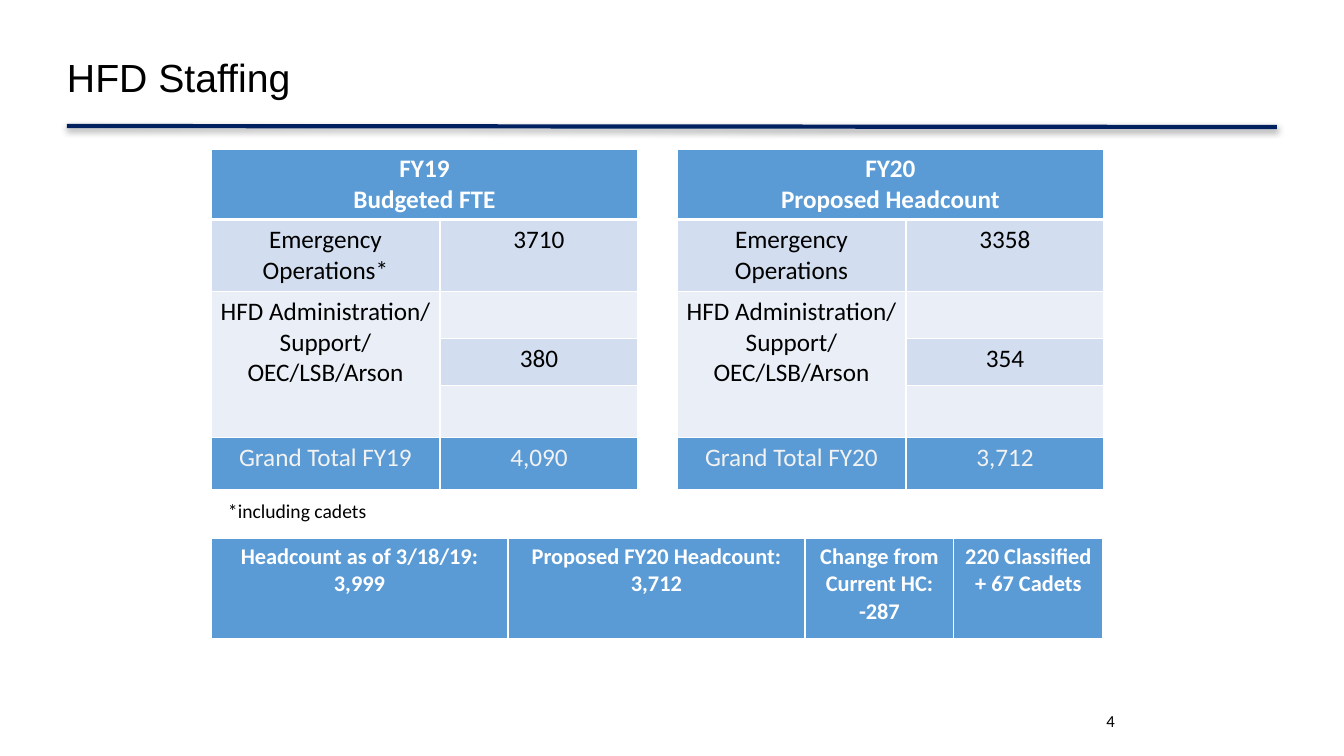
from dataclasses import dataclass

from lxml import etree
from pptx import Presentation
from pptx.dml.color import RGBColor
from pptx.enum.shapes import MSO_CONNECTOR
from pptx.enum.text import MSO_ANCHOR, PP_ALIGN
from pptx.oxml.ns import qn
from pptx.util import Pt

STRAIGHT = MSO_CONNECTOR.STRAIGHT
TOP, MIDDLE = MSO_ANCHOR.TOP, MSO_ANCHOR.MIDDLE
LEFT, CENTER, RIGHT = PP_ALIGN.LEFT, PP_ALIGN.CENTER, PP_ALIGN.RIGHT
SCALE = 914400 / 100.8


@dataclass(frozen=True)
class Theme:
    title_font: str = "Arial"
    body_font: str = "Calibri"
    ink: str = "000000"
    paper: str = "FFFFFF"
    navy: str = "002060"
    blue: str = "5B9BD5"
    band: str = "D2DEEF"
    pale: str = "EAEFF7"
    total_ink: str = "F2F2F2"
    title: int = 28
    table: int = 18
    summary: int = 16
    note: int = 14
    number: int = 12
    thin: int = 1
    thick: int = 3


def px(length):
    return round(length * SCALE)


def write(frame, text, size, color, font, bold=False, align=LEFT, spacing=1.0):
    frame.text = text
    for para in frame.paragraphs:
        para.alignment = align
        para.line_spacing = spacing
        para.font.size = Pt(size)
        for span in para.runs:
            span.font.name = font
            span.font.size = Pt(size)
            span.font.bold = bold
            span.font.color.rgb = RGBColor.from_string(color)


class Page:
    def __init__(self, deck, theme):
        self.theme = theme
        self.shapes = deck.slides.add_slide(deck.slide_layouts[6]).shapes

    def text(self, text, left, top, width, height, size, font=None, insets=(10, 5, 10, 5),
             anchor=TOP, wrap=True, **style):
        frame = self.shapes.add_textbox(px(left), px(top), px(width), px(height)).text_frame
        frame.word_wrap = wrap
        frame.vertical_anchor = anchor
        (frame.margin_left, frame.margin_top,
         frame.margin_right, frame.margin_bottom) = map(px, insets)
        write(frame, text, size, self.theme.ink, font or self.theme.body_font, **style)

    def rule(self, start, end):
        line = self.shapes.add_connector(STRAIGHT, *map(px, start + end))
        line.line.color.rgb = RGBColor.from_string(self.theme.navy)
        line.line.width = Pt(self.theme.thick)
        effects = etree.SubElement(line._element.spPr, qn("a:effectLst"))
        shadow = etree.SubElement(effects, qn("a:outerShdw"), blurRad=str(Pt(5)),
                                  dist=str(Pt(1.6)), dir="5400000", rotWithShape="0")
        color = etree.SubElement(shadow, qn("a:srgbClr"), val=self.theme.ink)
        etree.SubElement(color, qn("a:alpha"), val="38000")

    def table(self, left, top, columns, rows):
        table = self.shapes.add_table(len(rows), len(columns), px(left), px(top),
                                      px(sum(columns)), px(sum(rows))).table
        table.first_row = table.horz_banding = False
        for column, width in zip(table.columns, columns):
            column.width = px(width)
        for row, height in zip(table.rows, rows):
            row.height = px(height)
        return table

    def cell(self, cell, text, fill, size, color, bold=False, margin=6, above=1, below=1):
        properties = cell._tc.get_or_add_tcPr()
        thin = self.theme.thin
        for side, width in (("L", thin), ("R", thin), ("T", above), ("B", below)):
            border = etree.SubElement(properties, qn(f"a:ln{side}"), w=str(Pt(width)))
            paint = etree.SubElement(border, qn("a:solidFill"))
            etree.SubElement(paint, qn("a:srgbClr"), val=self.theme.paper)
        cell.fill.solid()
        cell.fill.fore_color.rgb = RGBColor.from_string(fill)
        cell.margin_left = cell.margin_right = px(margin)
        cell.margin_top = cell.margin_bottom = px(5)
        write(cell.text_frame, text, size, color, self.theme.body_font, bold=bold, align=CENTER)

    def staffing(self, left, heading, operations, year, figures):
        theme = self.theme
        emergency, support, total = figures
        table = self.table(left, 149, (229, 198), (70, 72, 47, 47, 52, 52))
        table.cell(0, 0).merge(table.cell(0, 1))
        table.cell(2, 0).merge(table.cell(4, 0))
        rows = (
            (heading, "", theme.blue, theme.paper),
            (operations, emergency, theme.band, theme.ink),
            ("HFD Administration/ Support/\nOEC/LSB/Arson", "", theme.pale, theme.ink),
            ("", support, theme.band, theme.ink),
            ("", "", theme.pale, theme.ink),
            (f"Grand Total {year}", total, theme.blue, theme.total_ink),
        )
        for index, (label, value, fill, color) in enumerate(rows):
            for column, text in enumerate((label, value)):
                self.cell(table.cell(index, column), text, fill, theme.table, color,
                          bold=index == 0,
                          above=theme.thick if index == 1 else theme.thin,
                          below=theme.thick if index == 0 else theme.thin)

    def summary(self, left, top, height, columns, texts):
        theme = self.theme
        table = self.table(left, top, columns, (height,))
        for index, text in enumerate(texts):
            self.cell(table.cell(0, index), text, theme.blue, theme.summary, theme.paper,
                      bold=True, margin=10, below=theme.thick)


def main():
    theme = Theme()
    deck = Presentation()
    deck.slide_width, deck.slide_height = px(1344), px(756)
    page = Page(deck, theme)
    page.rule((67, 126), (1277, 127))
    page.text("HFD Staffing", 67, 33, 922, 93, theme.title, font=theme.title_font,
              insets=(0, 0, 0, 0), anchor=MIDDLE, spacing=0.9)
    page.staffing(677, "FY20\nProposed Headcount", "Emergency Operations", "FY20",
                  ("3358", "354", "3,712"))
    page.text("4", 890, 706, 235, 40, theme.number, align=RIGHT)
    page.staffing(211, "FY19\nBudgeted FTE", "Emergency Operations*", "FY19",
                  ("3710", "380", "4,090"))
    page.text("*including cadets", 211, 491, 166, 40, theme.note,
              insets=(17, 5, 10, 5), anchor=MIDDLE, wrap=False)
    page.summary(211, 538, 102, (297, 297, 149, 149), (
        "Headcount as of 3/18/19:\n3,999",
        "Proposed FY20 Headcount: 3,712",
        "Change from Current HC:\n-287",
        "220 Classified + 67 Cadets",
    ))
    deck.save("out.pptx")


if __name__ == "__main__":
    main()
